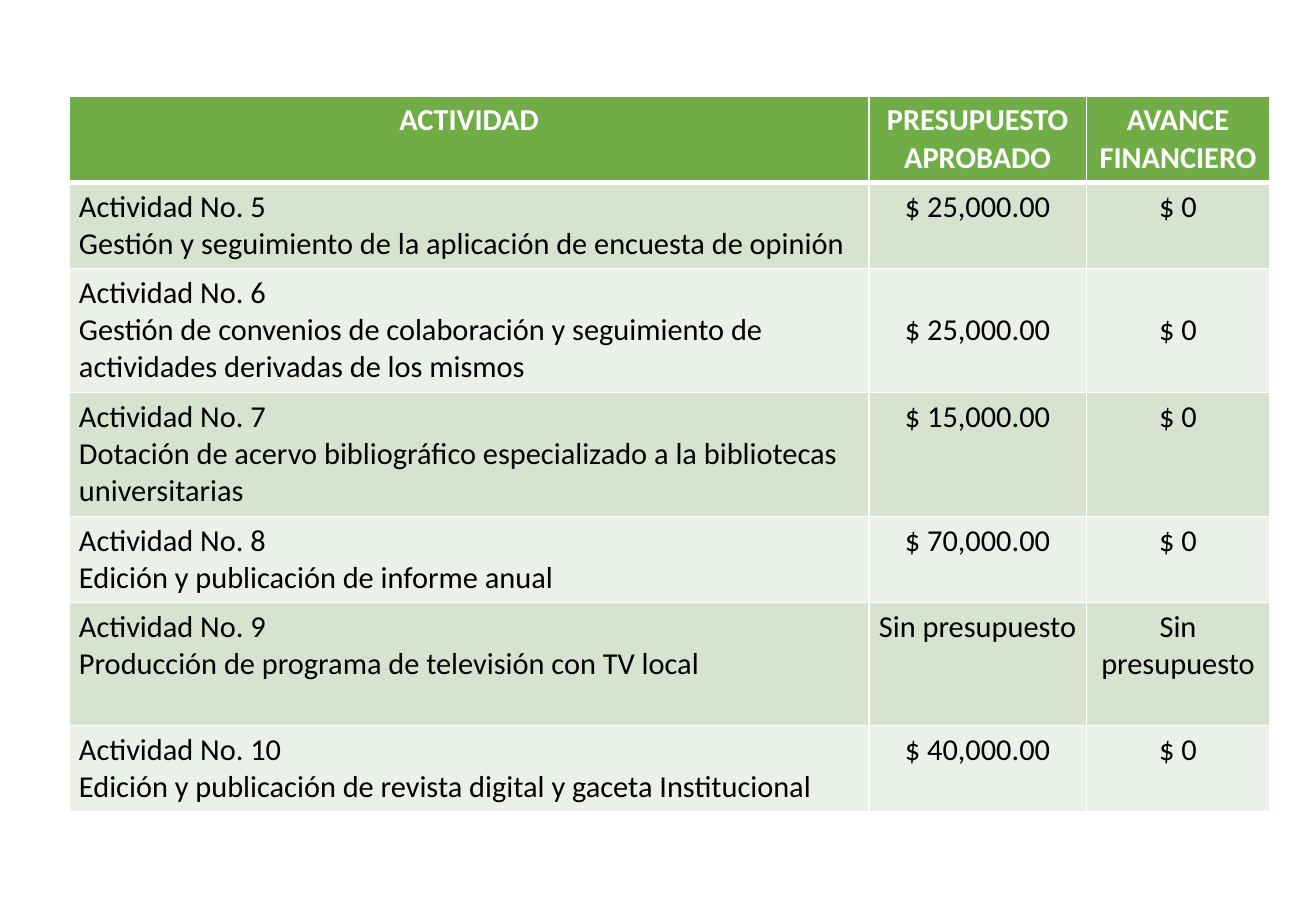
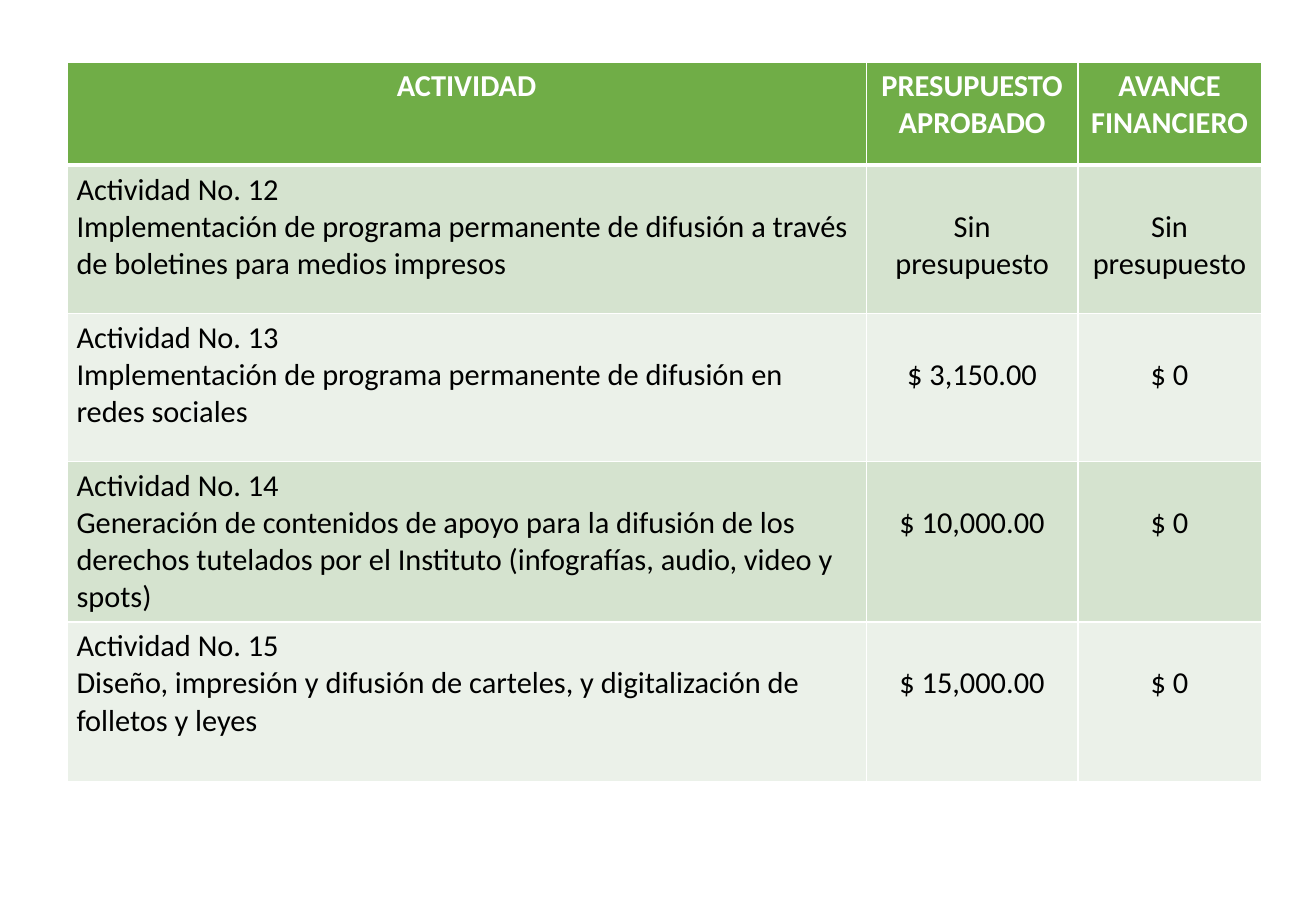
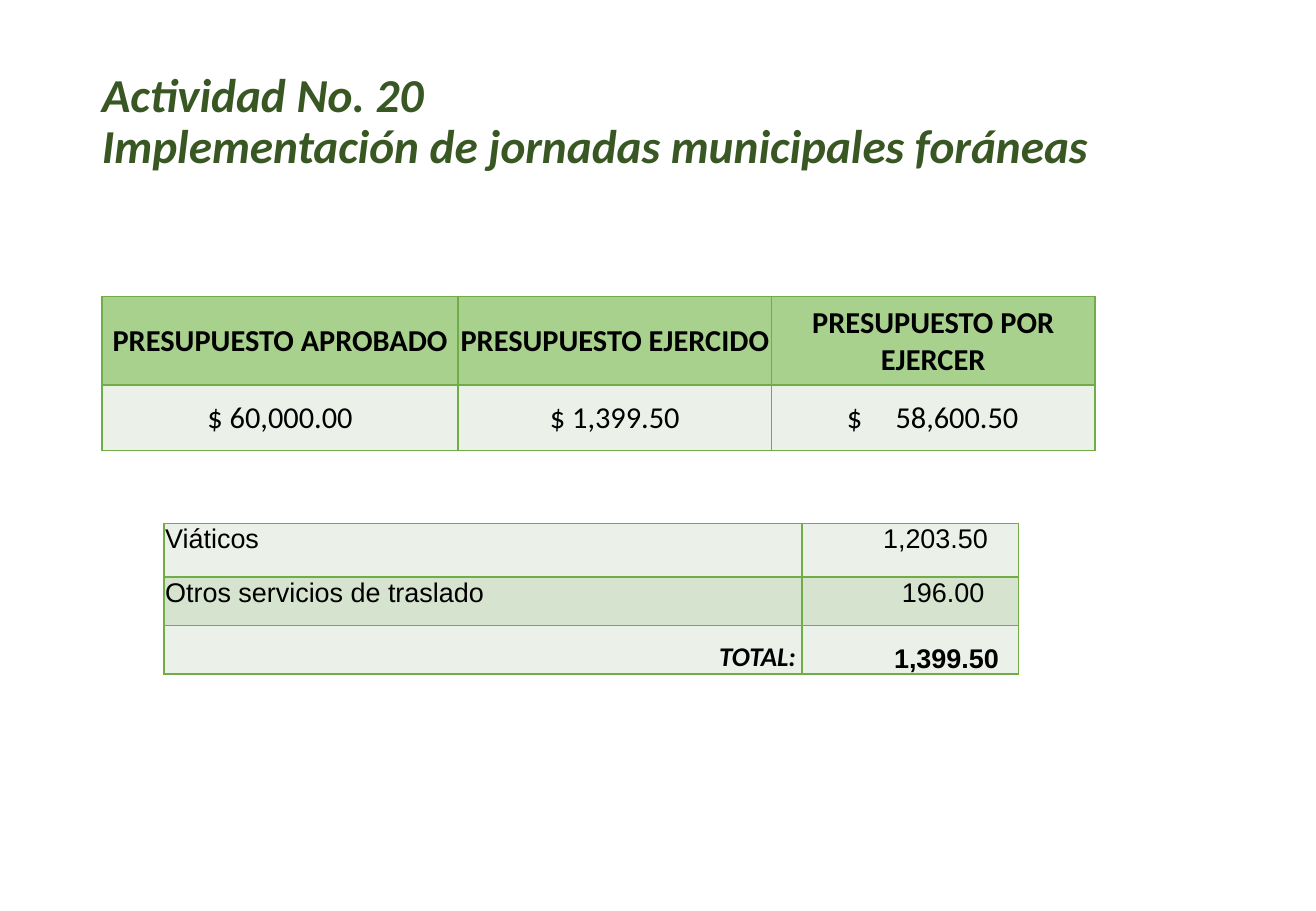
from lxml import etree
from pptx import Presentation
from pptx.dml.color import RGBColor
from pptx.enum.text import MSO_ANCHOR, PP_ALIGN
from pptx.oxml.ns import qn
from pptx.util import Inches, Pt

LEFT, CENTER, RIGHT = PP_ALIGN.LEFT, PP_ALIGN.CENTER, PP_ALIGN.RIGHT
TOP, MIDDLE, BOTTOM = MSO_ANCHOR.TOP, MSO_ANCHOR.MIDDLE, MSO_ANCHOR.BOTTOM

COLORS = {"green": "70AD47", "band": "D5E3CF", "pale": "EBF1E9", "light_green": "A9D18E",
          "title": "385723", "white": "FFFFFF", "black": "000000"}
LINE = 0.305  # height of one 18 pt line, in inches

# Content: activity, budget, progress, row height, lines the amounts are lowered
HEADERS = ["ACTIVIDAD", "PRESUPUESTO APROBADO", "AVANCE FINANCIERO"]
ACTIVITY_SLIDES = [
    {"at": (0.57, 0.79), "cols": [6.58, 1.79, 1.51], "header_height": 0.71, "rows": [
        ("Actividad No. 5\nGestión y seguimiento de la aplicación de encuesta de opinión",
         "$ 25,000.00", "$ 0", 0.71, 0),
        ("Actividad No. 6\nGestión de convenios de colaboración y seguimiento de "
         "actividades derivadas de los mismos", "$ 25,000.00", "$ 0", 1.02, 1),
        ("Actividad No. 7\nDotación de acervo bibliográfico especializado a la bibliotecas "
         "universitarias", "$ 15,000.00", "$ 0", 1.02, 0),
        ("Actividad No. 8\nEdición y publicación de informe anual",
         "$ 70,000.00", "$ 0", 0.71, 0),
        ("Actividad No. 9\nProducción de programa de televisión con TV local",
         "Sin presupuesto", "Sin presupuesto", 1.01, 0),
        ("Actividad No. 10\nEdición y publicación de revista digital y gaceta Institucional",
         "$ 40,000.00", "$ 0", 0.71, 0),
    ]},
    {"at": (0.55, 0.51), "cols": [6.58, 1.74, 1.51], "header_height": 0.85, "rows": [
        ("Actividad No. 12\nImplementación de programa permanente de difusión a través "
         "de boletines para medios impresos", "Sin presupuesto", "Sin presupuesto", 1.22, 1),
        ("Actividad No. 13\nImplementación de programa permanente de difusión en "
         "redes sociales", "$ 3,150.00", "$ 0", 1.22, 1),
        ("Actividad No. 14\nGeneración de contenidos de apoyo para la difusión de los "
         "derechos tutelados por el Instituto (infografías, audio, video y spots)",
         "$ 10,000.00", "$ 0", 1.32, 1),
        ("Actividad No. 15\nDiseño, impresión y difusión de carteles, y digitalización de "
         "folletos y leyes", "$ 15,000.00", "$ 0", 1.32, 1),
    ]},
]
TITLE = "Actividad No. 20\nImplementación de jornadas municipales foráneas"
BUDGET = [("PRESUPUESTO APROBADO", "$ 60,000.00"),
          ("PRESUPUESTO EJERCIDO", "$ 1,399.50"),
          ("PRESUPUESTO POR EJERCER", "$\t58,600.50")]
# Concept, amount, right margin of the amount
EXPENSES = [("Viáticos", "1,203.50", 0.25),
            ("Otros servicios de traslado", "196.00", 0.28),
            ("TOTAL:", "1,399.50", 0.16)]


def rgb(name):
    return RGBColor.from_string(COLORS[name])


def style_text(p, size, color, font="Calibri", bold=False, italic=False):
    for r in p.runs:
        r.font.size, r.font.name = Pt(size), font
        r.font.bold, r.font.italic = bold, italic
        r.font.color.rgb = rgb(color)


def set_borders(cell, color, top=1, bottom=1):
    tcPr = cell._tc.get_or_add_tcPr()
    sides = [("lnL", 1), ("lnR", 1), ("lnT", top), ("lnB", bottom)]
    for i, (side, width) in enumerate(sides):
        ln = etree.Element(qn("a:" + side), w=str(Pt(width)))
        fill = etree.SubElement(ln, qn("a:solidFill"))
        etree.SubElement(fill, qn("a:srgbClr"), val=COLORS[color])
        tcPr.insert(i, ln)


def fill_cell(cell, text, fill, margins, align=LEFT, anchor=TOP, size=18, color="black", **font):
    cell.text_frame.text = text
    cell.vertical_anchor = anchor
    (cell.margin_left, cell.margin_top,
     cell.margin_right, cell.margin_bottom) = [Inches(m) for m in margins]
    cell.fill.solid()
    cell.fill.fore_color.rgb = rgb(fill)
    for p in cell.text_frame.paragraphs:
        p.alignment = align
        style_text(p, size, color, **font)


def add_grid(s, at, cols, heights):
    frame = s.shapes.add_table(len(heights), len(cols), Inches(at[0]), Inches(at[1]),
                               Inches(sum(cols)), Inches(sum(heights)))
    table = frame.table
    table.first_row = table.horz_banding = False
    for column, width in zip(table.columns, cols):
        column.width = Inches(width)
    for row, height in zip(table.rows, heights):
        row.height = Inches(height)
    return table


def add_activity_slide(prs, data):
    s = prs.slides.add_slide(prs.slide_layouts[6])
    heights = [data["header_height"]] + [row[3] for row in data["rows"]]
    table = add_grid(s, data["at"], data["cols"], heights)
    for c, header in enumerate(HEADERS):
        cell = table.cell(0, c)
        fill_cell(cell, header, "green", (0.08, 0.05, 0.08, 0.05), CENTER,
                  color="white", bold=True)
        set_borders(cell, "white", bottom=3)
    for i, (*texts, _, lowered) in enumerate(data["rows"], 1):
        for c, text in enumerate(texts):
            cell = table.cell(i, c)
            side, top = (0.07, 0.05 + lowered * LINE) if c else (0.08, 0.05)
            fill_cell(cell, text, "band" if i % 2 else "pale", (side, top, side, 0.05),
                      CENTER if c else LEFT)
            set_borders(cell, "white", top=3 if i == 1 else 1)


def add_detail_slide(prs):
    s = prs.slides.add_slide(prs.slide_layouts[6])

    # Title
    tf = s.shapes.add_textbox(Inches(0.74), Inches(0.4), Inches(9.34), Inches(1.22)).text_frame
    tf.word_wrap = True
    tf.vertical_anchor = MIDDLE
    tf.text = TITLE
    for p in tf.paragraphs:
        p.line_spacing = 0.9
        style_text(p, 28, "title", bold=True, italic=True)

    # Expense breakdown
    table = add_grid(s, (1.35, 4.31), [5.25, 1.78], [0.44, 0.4, 0.4])
    for i, (concept, amount, margin) in enumerate(EXPENSES):
        total = i == len(EXPENSES) - 1
        fill = "band" if i % 2 else "pale"
        anchor = BOTTOM if total else TOP
        fill_cell(table.cell(i, 0), concept, fill, (0.01, 0.01, 0.05 if total else 0.01, 0),
                  RIGHT if total else LEFT, anchor, 16,
                  font="Calibri" if total else "Arial", bold=total, italic=total)
        fill_cell(table.cell(i, 1), amount, fill, (0.01, 0.01, margin, 0),
                  RIGHT, anchor, 16, font="Arial", bold=total)

    # Budget summary
    summary = add_grid(s, (0.84, 2.44), [2.93, 2.58, 2.66], [0.73, 0.54])
    for c, (header, amount) in enumerate(BUDGET):
        fill_cell(summary.cell(0, c), header, "light_green", (0.01, 0.01, 0.01, 0),
                  CENTER, MIDDLE, bold=True)
        cell, tabbed = summary.cell(1, c), "\t" in amount
        fill_cell(cell, amount, "pale", (0.62 if tabbed else 0.01, 0.01, 0.01, 0),
                  LEFT if tabbed else CENTER, MIDDLE)
        if tabbed:
            pPr = cell.text_frame.paragraphs[0]._p.get_or_add_pPr()
            tabs = etree.SubElement(pPr, qn("a:tabLst"))
            etree.SubElement(tabs, qn("a:tab"), pos=str(Inches(0.4)), algn="l")

    for grid in (table, summary):
        for cell in grid.iter_cells():
            set_borders(cell, "green")


def main():
    prs = Presentation()
    prs.slide_width, prs.slide_height = Inches(10.83), Inches(7.5)
    for data in ACTIVITY_SLIDES:
        add_activity_slide(prs, data)
    add_detail_slide(prs)
    prs.save("out.pptx")


if __name__ == "__main__":
    main()
